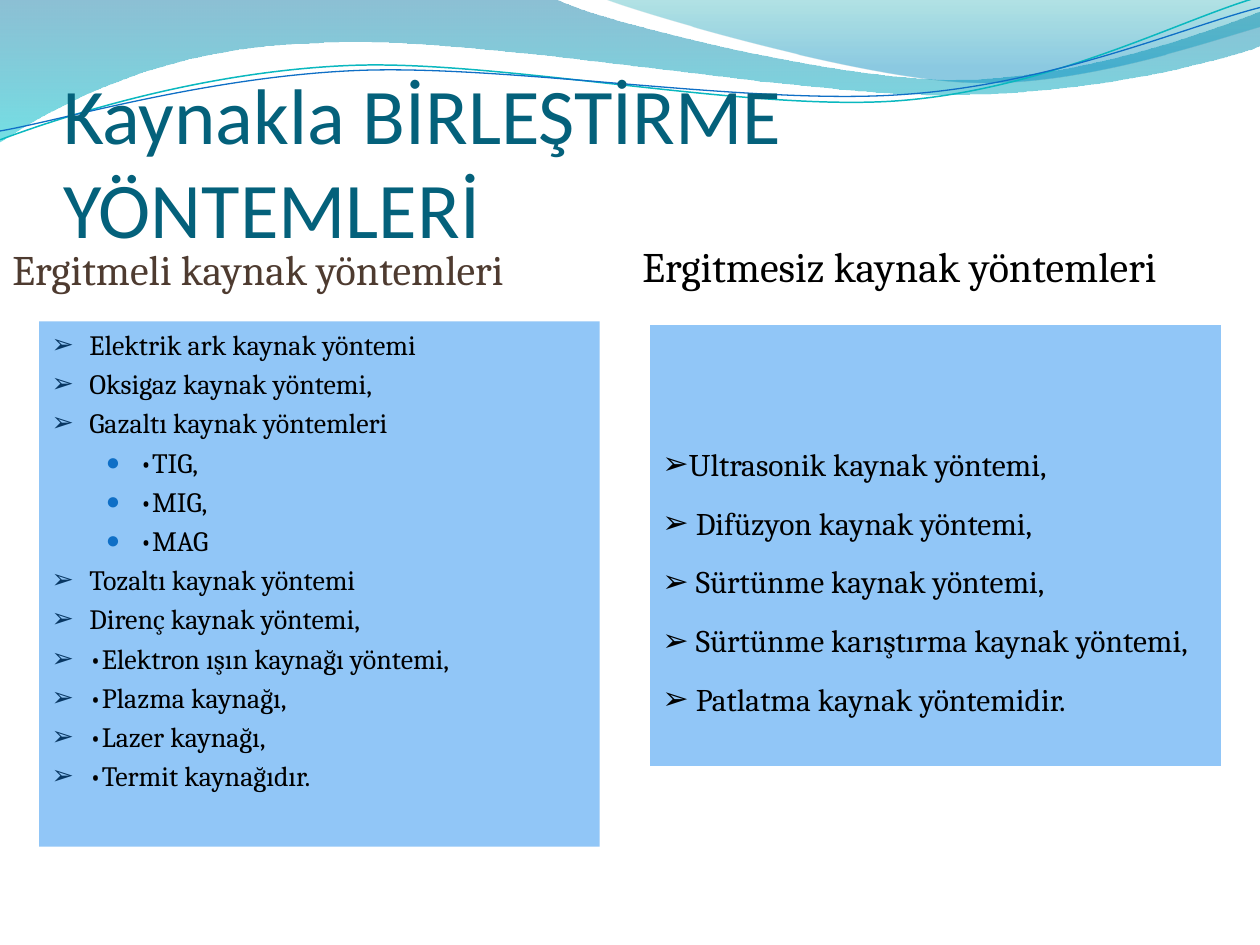
import math

from lxml import etree
from pptx import Presentation
from pptx import util as u
from pptx.dml.color import RGBColor
from pptx.enum import shapes, text
from pptx.oxml.ns import qn

COLUMNS, ROWS = 100, 75
CELL = u.Inches(0.1)
COLORS = {
    "title": "04617B", "panel": "91C6F7", "ink": "000000", "brown": "4E3B30",
    "arrow": "083763", "dot": "0F6FC6", "teal_line": "0AB8BF",
    "deep": "0074A1", "cyan": "00C6CF", "sea": "00A1A9", "sky": "008BBF",
}
FUSION = [
    (0, "Elektrik ark kaynak yöntemi"), (0, "Oksigaz kaynak yöntemi,"),
    (0, "Gazaltı kaynak yöntemleri"),
    (1, "•TIG,"), (1, "•MIG,"), (1, "•MAG"),
    (0, "Tozaltı kaynak yöntemi"), (0, "Direnç kaynak yöntemi,"),
    (0, "•Elektron ışın kaynağı yöntemi,"), (0, "•Plazma kaynağı,"),
    (0, "•Lazer kaynağı,"), (0, "•Termit kaynağıdır."),
]
SOLID_STATE = [
    "Ultrasonik kaynak yöntemi,", " Difüzyon kaynak yöntemi,",
    " Sürtünme kaynak yöntemi,", " Sürtünme karıştırma kaynak yöntemi,",
    " Patlatma kaynak yöntemidir.",
]
LEVELS = [
    {"char": "➢", "color": "arrow", "size": 95, "left": 0.3, "hang": -0.3},
    {"char": "●", "color": "dot", "size": 85, "left": 0.7, "hang": -0.27},
]
BANDS = [
    ([(0, 0), (4.4, -0.01), (4.76, 0.17, 6.64, 0.63, 7.58, 0.63),
      (8.53, 0.63, 9.58, 0.26, 10, 0.09), (10.01, 0.36),
      (9.83, 0.44, 8.7, 0.76, 7.46, 0.75), (6.22, 0.75, 3.82, 0.28, 2.57, 0.34),
      (1.29, 0.36, 0.46, 0.83, -0.01, 1.13), (0, 0)],
     [(0, "deep", 45), (1, "cyan", 55)]),
    ([(4.79, -0.01), (5.09, 0.11, 6.82, 0.62, 7.69, 0.65),
      (8.56, 0.69, 9.61, 0.32, 10, 0.21), (10, 0), (4.79, -0.01)],
     [(0, "sea", 30), (0.8, "sky", 45)]),
]
TILT = -2.7
STRANDS = [
    ([(0, 1.11), (0.48, 0.93, 1.58, 0.57, 2.77, 0.52),
      (3.95, 0.47, 5.93, 0.89, 7.13, 0.8), (8.33, 0.71, 9.38, 0.15, 9.98, -0.02)],
     (4.99, 0.58), "teal_line", 0.85),
    ([(0, 1.04), (0.47, 0.96, 1.64, 0.61, 2.83, 0.56),
      (4.03, 0.51, 5.97, 0.84, 7.17, 0.75), (8.36, 0.67, 9.41, 0.21, 10, 0.06)],
     (5, 0.59), "dot", 0.75),
]


def rgb(name):
    return RGBColor.from_string(COLORS[name])


def apply(obj, values):
    for name, value in values.items():
        setattr(obj, name, value)


def grid(*cells):
    return [round(c * CELL) for c in cells]


def place(sp, *cells):
    apply(sp, dict(zip(("left", "top", "width", "height"), grid(*cells))))


def pairs(part):
    return list(zip(part[::2], part[1::2]))


def rotate(part, center, degrees):
    c, d = math.cos(math.radians(degrees)), math.sin(math.radians(degrees))
    cx, cy = center
    return [v for x, y in pairs(part)
            for v in (cx + (x - cx) * c - (y - cy) * d,
                      cy + (x - cx) * d + (y - cy) * c)]


def add_curve(s, path, close):
    anchors = [(u.Inches(part[-2]), u.Inches(part[-1])) for part in path]
    builder = s.shapes.build_freeform(*anchors[0])
    builder.add_line_segments(anchors[1:], close=close)
    sp = builder.convert_to_shape()
    sp.shadow.inherit = False
    segments = list(sp._element.iter(qn("a:lnTo")))
    for segment, part in zip(segments, path[1:]):
        if len(part) == 6:
            bend = etree.Element(qn("a:cubicBezTo"))
            for x, y in pairs(part):
                etree.SubElement(bend, qn("a:pt"), x=str(u.Inches(x) - sp.left),
                                 y=str(u.Inches(y) - sp.top))
            segment.getparent().replace(segment, bend)
    return sp


def add_band(s, path, stops):
    sp = add_curve(s, path, True)
    sp.line.fill.background()
    sp.fill.gradient()
    sp.fill.gradient_angle = 270
    for stop, (position, color, alpha) in zip(sp.fill.gradient_stops, stops):
        stop.position = position
        stop.color.rgb = rgb(color)
    for clr, (_, _, alpha) in zip(sp._element.spPr.iter(qn("a:srgbClr")), stops):
        etree.SubElement(clr, qn("a:alpha"), val=str(alpha * 1000))


def add_strand(s, path, center, color, width):
    sp = add_curve(s, [rotate(part, center, -TILT) for part in path], False)
    sp.rotation = TILT
    sp.fill.background()
    sp.line.color.rgb = rgb(color)
    sp.line.width = u.Pt(width)


def set_bullet(p, char, color=None, size=None, left=0, hang=0):
    pPr = p._p.get_or_add_pPr()
    pPr.set("marL", str(u.Inches(left)))
    pPr.set("indent", str(u.Inches(hang)))
    if color:
        clr = etree.SubElement(pPr, qn("a:buClr"))
        etree.SubElement(clr, qn("a:srgbClr"), val=COLORS[color])
    if size:
        etree.SubElement(pPr, qn("a:buSzPct"), val=str(size * 1000))
    etree.SubElement(pPr, qn("a:buFont"), typeface="Arial")
    etree.SubElement(pPr, qn("a:buChar"), char=char)


def write(p, words, size, color="ink", font="Cambria"):
    p.alignment = text.PP_ALIGN.LEFT
    r = p.add_run()
    r.text = words
    apply(r.font, {"size": u.Pt(size), "name": font})
    r.font.color.rgb = rgb(color)


def paragraphs(tf, items):
    for i, item in enumerate(items):
        yield i, tf.paragraphs[0] if i == 0 else tf.add_paragraph(), item


def paint_panel(sp):
    sp.fill.solid()
    sp.fill.fore_color.rgb = rgb("panel")
    sp.line.fill.background()


def fill_title(sp, words):
    place(sp, 5, 7.7, 90, 12.5)
    apply(sp.text_frame, {
        "margin_left": 0, "margin_right": 0, "margin_bottom": 0,
        "margin_top": u.Inches(0.05), "word_wrap": True,
        "vertical_anchor": text.MSO_ANCHOR.BOTTOM,
        "auto_size": text.MSO_AUTO_SIZE.NONE})
    write(sp.text_frame.paragraphs[0], words, 45, "title", "Calibri")


def fill_list(sp, items):
    place(sp, 3.1, 25.5, 44.5, 41.7)
    paint_panel(sp)
    sp.text_frame.auto_size = text.MSO_AUTO_SIZE.NONE
    for i, p, (level, words) in paragraphs(sp.text_frame, items):
        p.level = level
        set_bullet(p, **LEVELS[level])
        p.space_before = u.Pt(3.2 if i else 0)
        write(p, words, 16)


def add_heading(s, cells, words, color, top):
    tf = s.shapes.add_textbox(*grid(*cells)).text_frame
    apply(tf, {"word_wrap": True, "margin_top": u.Inches(top)})
    write(tf.paragraphs[0], words, 24, color)


def add_panel(s, cells, items):
    sp = s.shapes.add_shape(shapes.MSO_SHAPE.RECTANGLE, *grid(*cells))
    sp.shadow.inherit = False
    paint_panel(sp)
    apply(sp.text_frame, {"word_wrap": True, "margin_top": u.Inches(0.95),
                          "vertical_anchor": text.MSO_ANCHOR.TOP})
    for i, p, words in paragraphs(sp.text_frame, items):
        set_bullet(p, "➢")
        apply(p, {"space_before": u.Pt(6 if i else 0), "space_after": u.Pt(6)})
        write(p, words, 18)


def main():
    prs = Presentation()
    apply(prs, {"slide_width": COLUMNS * CELL, "slide_height": ROWS * CELL})
    s = prs.slides.add_slide(prs.slide_layouts[1])
    title, body = s.placeholders
    for band in BANDS:
        add_band(s, *band)
    for strand in STRANDS:
        add_strand(s, *strand)
    for sp in (title, body):
        s.shapes._spTree.append(sp._element)
    fill_title(title, "Kaynakla BİRLEŞTİRME YÖNTEMLERİ")
    fill_list(body, FUSION)
    add_heading(s, (0, 18.7, 54.9, 5), "Ergitmeli kaynak yöntemleri", "brown", 0.06)
    add_heading(s, (50, 15.6, 50, 8.1), "Ergitmesiz kaynak yöntemleri", "ink", 0.35)
    add_panel(s, (51.6, 25.8, 45.3, 35), SOLID_STATE)
    prs.save("out.pptx")


if __name__ == "__main__":
    main()
